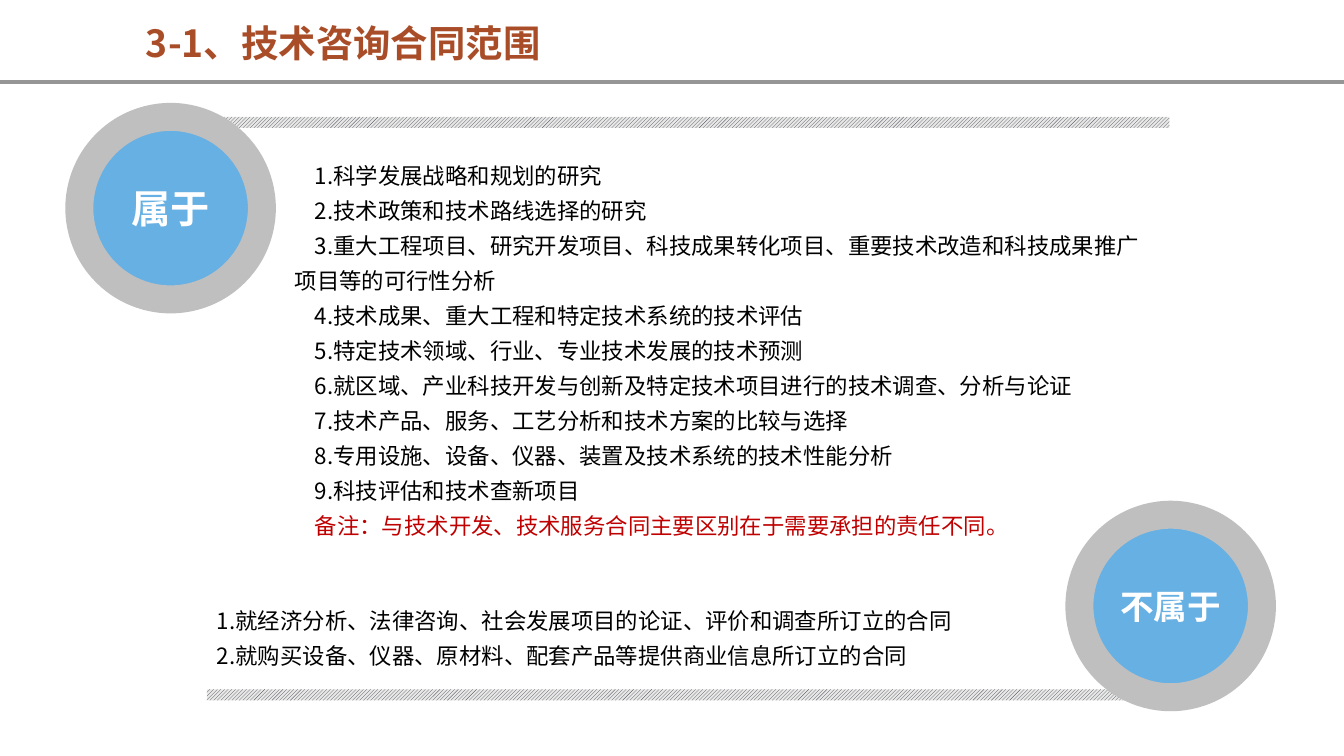
from dataclasses import dataclass

from lxml import etree
from pptx import Presentation
from pptx.dml.color import RGBColor
from pptx.enum.dml import MSO_PATTERN
from pptx.enum.shapes import MSO_CONNECTOR, MSO_SHAPE
from pptx.enum.text import MSO_ANCHOR, PP_ALIGN
from pptx.oxml.ns import qn
from pptx.util import Cm, Pt

STRAIGHT = MSO_CONNECTOR.STRAIGHT
RECT, OVAL = MSO_SHAPE.RECTANGLE, MSO_SHAPE.OVAL
HATCH = MSO_PATTERN.LIGHT_UPWARD_DIAGONAL
TOP, MIDDLE = MSO_ANCHOR.TOP, MSO_ANCHOR.MIDDLE
LEFT, CENTER = PP_ALIGN.LEFT, PP_ALIGN.CENTER

SLIDE_W, SLIDE_H = 25.4, 14.29
BAR_X, BAR_H = 3.91, 0.21
CIRCLE_D = 3.45

INCLUDED = [
    "1.科学发展战略和规划的研究",
    "2.技术政策和技术路线选择的研究",
    "3.重大工程项目、研究开发项目、科技成果转化项目、重要技术改造和科技成果推广项目等的可行性分析",
    "4.技术成果、重大工程和特定技术系统的技术评估",
    "5.特定技术领域、行业、专业技术发展的技术预测",
    "6.就区域、产业科技开发与创新及特定技术项目进行的技术调查、分析与论证",
    "7.技术产品、服务、工艺分析和技术方案的比较与选择",
    "8.专用设施、设备、仪器、装置及技术系统的技术性能分析",
    "9.科技评估和技术查新项目",
]
REMARK = "备注：与技术开发、技术服务合同主要区别在于需要承担的责任不同。"
EXCLUDED = [
    "1.就经济分析、法律咨询、社会发展项目的论证、评价和调查所订立的合同",
    "2.就购买设备、仪器、原材料、配套产品等提供商业信息所订立的合同",
]


@dataclass(frozen=True)
class Theme:
    """Colours, font and type sizes of the slide."""

    font: str = "Noto Sans CJK SC"
    title: RGBColor = RGBColor(0xA9, 0x4D, 0x28)
    body: RGBColor = RGBColor(0, 0, 0)
    remark: RGBColor = RGBColor(0xC0, 0, 0)
    white: RGBColor = RGBColor(0xFF, 0xFF, 0xFF)
    rule: RGBColor = RGBColor(0x96, 0x96, 0x96)
    circle: RGBColor = RGBColor(0x67, 0xB0, 0xE3)
    ring: RGBColor = RGBColor(0xBF, 0xBF, 0xBF)
    hatch: RGBColor = RGBColor(0x41, 0x44, 0x55)
    hatch_back: RGBColor = RGBColor(0xE8, 0xE8, 0xE6)
    title_size: int = 20
    body_size: int = 12
    ring_width: int = 15


def write(tf, lines, font, size, bold=False, align=LEFT, anchor=TOP,
          spacing=1.0, indent=0, inset=(0.19, 0.1)):
    """Fill a text frame with (text, colour) paragraphs."""
    tf.word_wrap = True
    tf.vertical_anchor = anchor
    tf.margin_left = tf.margin_right = Cm(inset[0])
    tf.margin_top = tf.margin_bottom = Cm(inset[1])
    for i, (text, color) in enumerate(lines):
        p = tf.add_paragraph() if i else tf.paragraphs[0]
        p.alignment, p.line_spacing = align, spacing
        p._p.get_or_add_pPr().set("indent", str(Cm(indent)))
        r = p.add_run()
        r.text = text
        r.font.size, r.font.bold, r.font.name = Pt(size), bold, font
        r.font.color.rgb = color
        etree.SubElement(r._r.get_or_add_rPr(), qn("a:ea"), typeface=font)


class Deck:
    """Draws the slide's elements in one theme."""

    def __init__(self, theme, s):
        """Keep the theme and the current slide."""
        self.theme, self.s = theme, s

    def rule(self, y):
        """Draw a line across the slide."""
        line = self.s.shapes.add_connector(STRAIGHT, 0, Cm(y), Cm(SLIDE_W), Cm(y))
        line.line.color.rgb, line.line.width = self.theme.rule, Pt(1.75)
        etree.SubElement(line._element.spPr, qn("a:effectLst"))

    def bar(self, y, w):
        """Draw a hatched bar."""
        sp = self.s.shapes.add_shape(RECT, Cm(BAR_X), Cm(y), Cm(w), Cm(BAR_H))
        sp.shadow.inherit = False
        sp.fill.patterned()
        sp.fill.pattern = HATCH
        sp.fill.fore_color.rgb = self.theme.hatch
        sp.fill.back_color.rgb = self.theme.hatch_back
        sp.line.fill.background()

    def circle(self, x, y, label, size):
        """Draw a ringed circle with a label."""
        t = self.theme
        sp = self.s.shapes.add_shape(OVAL, Cm(x), Cm(y), Cm(CIRCLE_D), Cm(CIRCLE_D))
        sp.shadow.inherit = False
        sp.fill.solid()
        sp.fill.fore_color.rgb = t.circle
        sp.line.color.rgb, sp.line.width = t.ring, Pt(t.ring_width)
        write(sp.text_frame, [(label, t.white)], t.font, size,
              bold=True, align=CENTER, anchor=MIDDLE)

    def text(self, x, y, w, h, lines, size, **fmt):
        """Add a text box."""
        sp = self.s.shapes.add_textbox(Cm(x), Cm(y), Cm(w), Cm(h))
        write(sp.text_frame, lines, self.theme.font, size, **fmt)


def main():
    """Build and save the slide."""
    prs = Presentation()
    prs.slide_width, prs.slide_height = Cm(SLIDE_W), Cm(SLIDE_H)
    t = Theme()
    deck = Deck(t, prs.slides.add_slide(prs.slide_layouts[6]))

    deck.rule(1.55)
    deck.bar(13.03, 17.48)
    deck.bar(2.21, 18.19)
    deck.circle(1.5, 2.21, "属于", 21)
    included = [(line, t.body) for line in INCLUDED] + [(REMARK, t.remark)]
    deck.text(5.38, 2.82, 16.71, 7.52, included, t.body_size, spacing=1.3, indent=0.38)
    deck.circle(20.4, 9.73, "不属于", 18)
    excluded = [(line, t.body) for line in EXCLUDED]
    deck.text(BAR_X, 11.23, 15.7, 1.52, excluded, t.body_size, spacing=1.3)
    deck.text(2.36, 0.08, 11.15, 1.27, [("3-1、技术咨询合同范围", t.title)], t.title_size,
              bold=True, spacing=1.2, indent=0.15, inset=(0.25, 0.13))
    prs.save("out.pptx")


if __name__ == "__main__":
    main()
